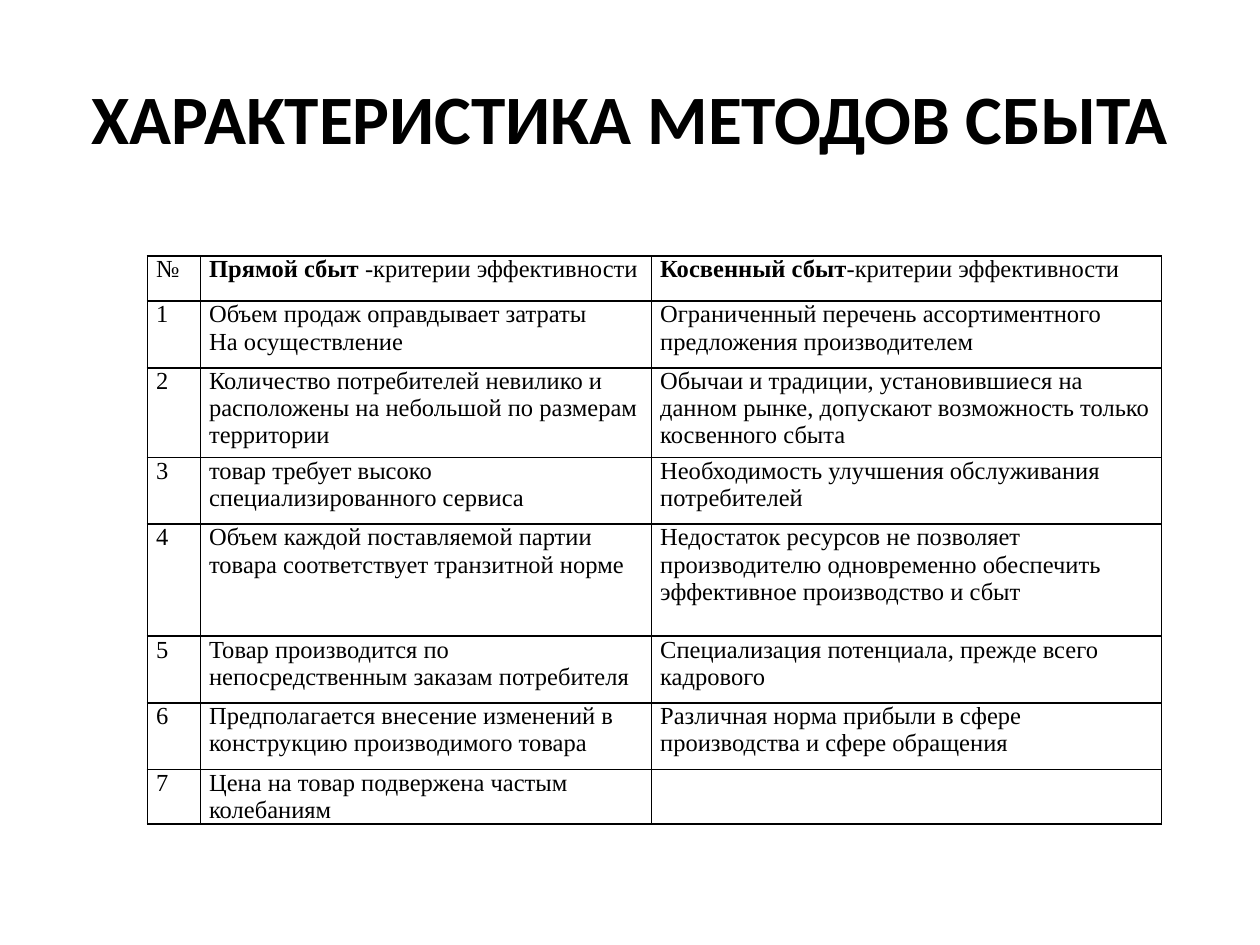
from lxml import etree
from pptx import Presentation
from pptx.dml.color import RGBColor
from pptx.enum.text import MSO_ANCHOR, MSO_AUTO_SIZE, PP_ALIGN
from pptx.oxml.ns import qn
from pptx.util import Inches, Pt

MIDDLE = MSO_ANCHOR.MIDDLE
NO_AUTOFIT = MSO_AUTO_SIZE.NONE
CENTER, LEFT, JUSTIFY = PP_ALIGN.CENTER, PP_ALIGN.LEFT, PP_ALIGN.JUSTIFY
TITLE_ONLY_LAYOUT = 5

COLORS = {"text": "000000", "border": "000000", "background": "FFFFFF"}
TITLE_FONT = "Calibri"
TABLE_FONT = "Times New Roman"

COLUMN_WIDTHS = [0.42, 3.58, 4.05]
ROW_HEIGHTS = [0.36, 0.53, 0.71, 0.53, 0.89, 0.53, 0.53, 0.36]
CRITERIA = "-критерии эффективности"
HEADINGS = ["Прямой сбыт ", "Косвенный сбыт"]
# Each row pairs the direct sales criterion with the indirect sales one.
METHODS = [
    ("Объем продаж оправдывает затраты\nНа осуществление",
     "Ограниченный перечень ассортиментного предложения производителем"),
    ("Количество потребителей невилико и расположены на небольшой по размерам территории",
     "Обычаи и традиции, установившиеся на данном рынке, "
     "допускают возможность только косвенного сбыта"),
    ("товар требует высоко специализированного сервиса",
     "Необходимость улучшения обслуживания потребителей"),
    ("Объем каждой поставляемой партии товара соответствует транзитной норме",
     "Недостаток ресурсов не позволяет производителю одновременно "
     "обеспечить эффективное производство и сбыт"),
    ("Товар производится по непосредственным заказам потребителя",
     "Специализация потенциала, прежде всего кадрового"),
    ("Предполагается внесение изменений в конструкцию производимого товара",
     "Различная норма прибыли в сфере производства и сфере обращения"),
    ("Цена на товар подвержена частым колебаниям", ""),
]


def add_run(paragraph, text, font_name, size, bold=False):
    run = paragraph.add_run()
    run.text = text
    run.font.name = font_name
    run.font.size = Pt(size)
    run.font.bold = bold
    run.font.color.rgb = RGBColor.from_string(COLORS["text"])


def add_title(slide, text):
    title = slide.shapes.title
    title.left, title.top = Inches(0.5), Inches(0.3)
    title.width, title.height = Inches(9), Inches(1.25)
    frame = title.text_frame
    frame.word_wrap = True
    frame.auto_size = NO_AUTOFIT
    frame.vertical_anchor = MIDDLE
    paragraph = frame.paragraphs[0]
    paragraph.alignment = CENTER
    add_run(paragraph, text, TITLE_FONT, 39.6, bold=True)


def add_borders(cell):
    properties = cell._tc.get_or_add_tcPr()
    for position, side in enumerate(("a:lnL", "a:lnR", "a:lnT", "a:lnB")):
        line = etree.Element(qn(side), w=str(Pt(1)))
        fill = etree.SubElement(line, qn("a:solidFill"))
        etree.SubElement(fill, qn("a:srgbClr"), val=COLORS["border"])
        properties.insert(position, line)


def format_cell(cell):
    cell.margin_left = cell.margin_right = Inches(0.07)
    cell.margin_top = cell.margin_bottom = 0
    cell.fill.background()
    add_borders(cell)


def fill_cell(cell, lines, alignment):
    """Write one paragraph per line, each line a list of (text, bold) runs."""
    frame = cell.text_frame
    for index, runs in enumerate(lines):
        paragraph = frame.add_paragraph() if index else frame.paragraphs[0]
        paragraph.alignment = alignment
        for text, bold in runs:
            add_run(paragraph, text, TABLE_FONT, 14, bold)


def plain_lines(text):
    return [[(line, False)] for line in text.splitlines()]


def add_methods_table(slide):
    rows = [[plain_lines("№")]
            + [[[(heading, True), (CRITERIA, False)]] for heading in HEADINGS]]
    for number, criteria in enumerate(METHODS, start=1):
        rows.append([plain_lines(text) for text in (str(number), *criteria)])

    table = slide.shapes.add_table(
        len(rows), len(COLUMN_WIDTHS), Inches(1.17), Inches(2.03),
        Inches(sum(COLUMN_WIDTHS)), Inches(sum(ROW_HEIGHTS))).table
    table.first_row = table.horz_banding = False
    for column, width in zip(table.columns, COLUMN_WIDTHS):
        column.width = Inches(width)
    for row, height, contents in zip(table.rows, ROW_HEIGHTS, rows):
        row.height = Inches(height)
        for index, (cell, lines) in enumerate(zip(row.cells, contents)):
            format_cell(cell)
            fill_cell(cell, lines, LEFT if index else JUSTIFY)


def main():
    presentation = Presentation()
    presentation.slide_width = Inches(10)
    presentation.slide_height = Inches(7.5)
    slide = presentation.slides.add_slide(presentation.slide_layouts[TITLE_ONLY_LAYOUT])
    background = slide.background.fill
    background.solid()
    background.fore_color.rgb = RGBColor.from_string(COLORS["background"])
    add_title(slide, "ХАРАКТЕРИСТИКА МЕТОДОВ СБЫТА")
    add_methods_table(slide)
    presentation.save("out.pptx")


if __name__ == "__main__":
    main()
